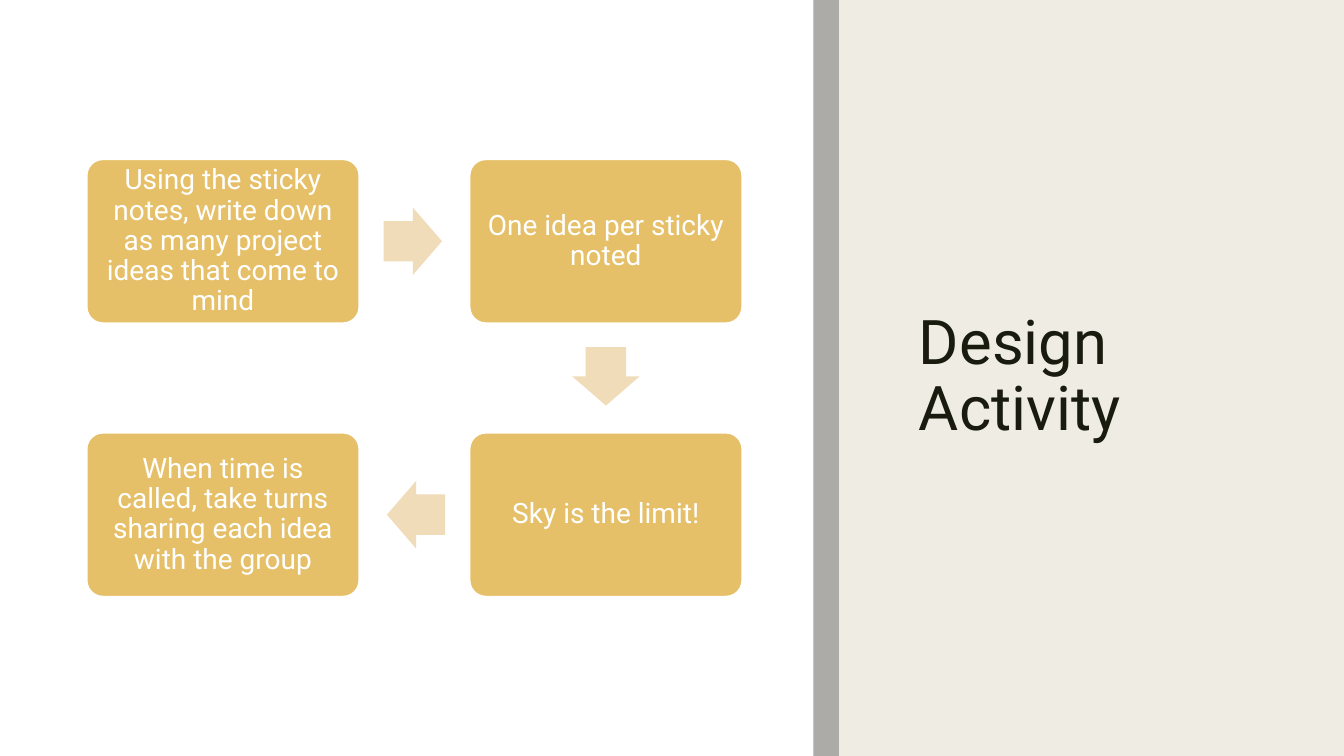
import pptx
import pptx.util
import pptx.dml.color
import pptx.enum.shapes
import pptx.enum.text
import pptx.oxml.ns
import lxml.etree

Cm = pptx.util.Cm
Kind = pptx.enum.shapes.MSO_SHAPE
Align = pptx.enum.text.PP_ALIGN

# Content: each step with its column and row, in order of flow
TITLE = "Design Activity"
STEPS = [
    ("Using the sticky notes, write down as many project ideas that come to mind", 0, 0),
    ("One idea per sticky noted", 1, 0),
    ("Sky is the limit!", 1, 1),
    ("When time is called, take turns sharing each idea with the group", 0, 1),
]
TURNS = {(1, 0): 0, (0, 1): 90, (-1, 0): 180}

THEME = {
    "font": "Roboto", "title": 44, "body": 20,
    "ink": "191B0E", "white": "FFFFFF", "panel": "EFEDE3",
    "bar": "808080", "box": "E6C069", "arrow": "F0DCB9",
}

# Layout in centimetres
WIDE, HIGH = 33.87, 19.05
LEFT, TOP = 2.18, 4.01
BOX_W, BOX_H = 6.88, 4.14
STEP_X, STEP_Y = 9.65, 6.89
ARROW_W, ARROW_H = 1.47, 1.7
BACK = 0.04  # arrows sit slightly behind the middle of each gap
SPLIT, BAR_W = 20.5, 0.64


def tint(name):
    return pptx.dml.color.RGBColor.from_string(THEME[name])


def draw(kind, x, y, w, h, fill):
    shape = slide.shapes.add_shape(kind, Cm(x), Cm(y), Cm(w), Cm(h))
    shape.shadow.inherit = False
    shape.fill.solid()
    shape.fill.fore_color.rgb = tint(fill)
    shape.line.fill.background()
    return shape


def write(shape, text, size, color, align, space):
    frame = shape.text_frame
    frame.word_wrap = True
    frame.vertical_anchor = pptx.enum.text.MSO_ANCHOR.MIDDLE
    frame.text = text
    para = frame.paragraphs[0]
    para.alignment = align
    para.line_spacing = space
    font = para.runs[0].font
    font.name = THEME["font"]
    font.size = pptx.util.Pt(THEME[size])
    font.color.rgb = tint(color)
    return frame


def middle(col, row):
    return LEFT + col * STEP_X + BOX_W / 2, TOP + row * STEP_Y + BOX_H / 2


deck = pptx.Presentation()
deck.slide_width, deck.slide_height = Cm(WIDE), Cm(HIGH)
slide = deck.slides.add_slide(deck.slide_layouts[6])

# Backdrop and divider
draw(Kind.RECTANGLE, 0, 0, WIDE, HIGH, "panel")
draw(Kind.RECTANGLE, 0, 0, SPLIT, HIGH, "white")
bar = draw(Kind.RECTANGLE, SPLIT, 0, BAR_W, HIGH, "bar")
qn = pptx.oxml.ns.qn
shade = bar.fill._xPr.find(".//" + qn("a:srgbClr"))
lxml.etree.SubElement(shade, qn("a:alpha")).set("val", "60000")

# Title
title = slide.shapes.add_textbox(Cm(22.91), Cm(1.78), Cm(9.17), Cm(15.49))
write(title, TITLE, "title", "ink", Align.LEFT, 0.89)

# Step boxes
for text, col, row in STEPS:
    x, y = middle(col, row)
    box = draw(Kind.ROUNDED_RECTANGLE, x - BOX_W / 2, y - BOX_H / 2, BOX_W, BOX_H, "box")
    box.adjustments[0] = 0.1
    box.line.color.rgb = tint("white")
    box.line.width = pptx.util.Pt(1.5)
    frame = write(box, text, "body", "white", Align.CENTER, 0.9)
    frame.margin_left = frame.margin_right = Cm(0.2)
    frame.margin_top = frame.margin_bottom = Cm(0.2)

# Arrows between successive steps
for (_, col, row), (_, col2, row2) in zip(STEPS, STEPS[1:]):
    dx, dy = col2 - col, row2 - row
    (x, y), (x2, y2) = middle(col, row), middle(col2, row2)
    mid_x, mid_y = (x + x2) / 2 - BACK * dx, (y + y2) / 2 - BACK * dy
    arrow = draw(Kind.RIGHT_ARROW, mid_x - ARROW_W / 2, mid_y - ARROW_H / 2,
                 ARROW_W, ARROW_H, "arrow")
    arrow.adjustments[0], arrow.adjustments[1] = 0.6, 0.5
    arrow.rotation = TURNS[dx, dy]

deck.save("out.pptx")
